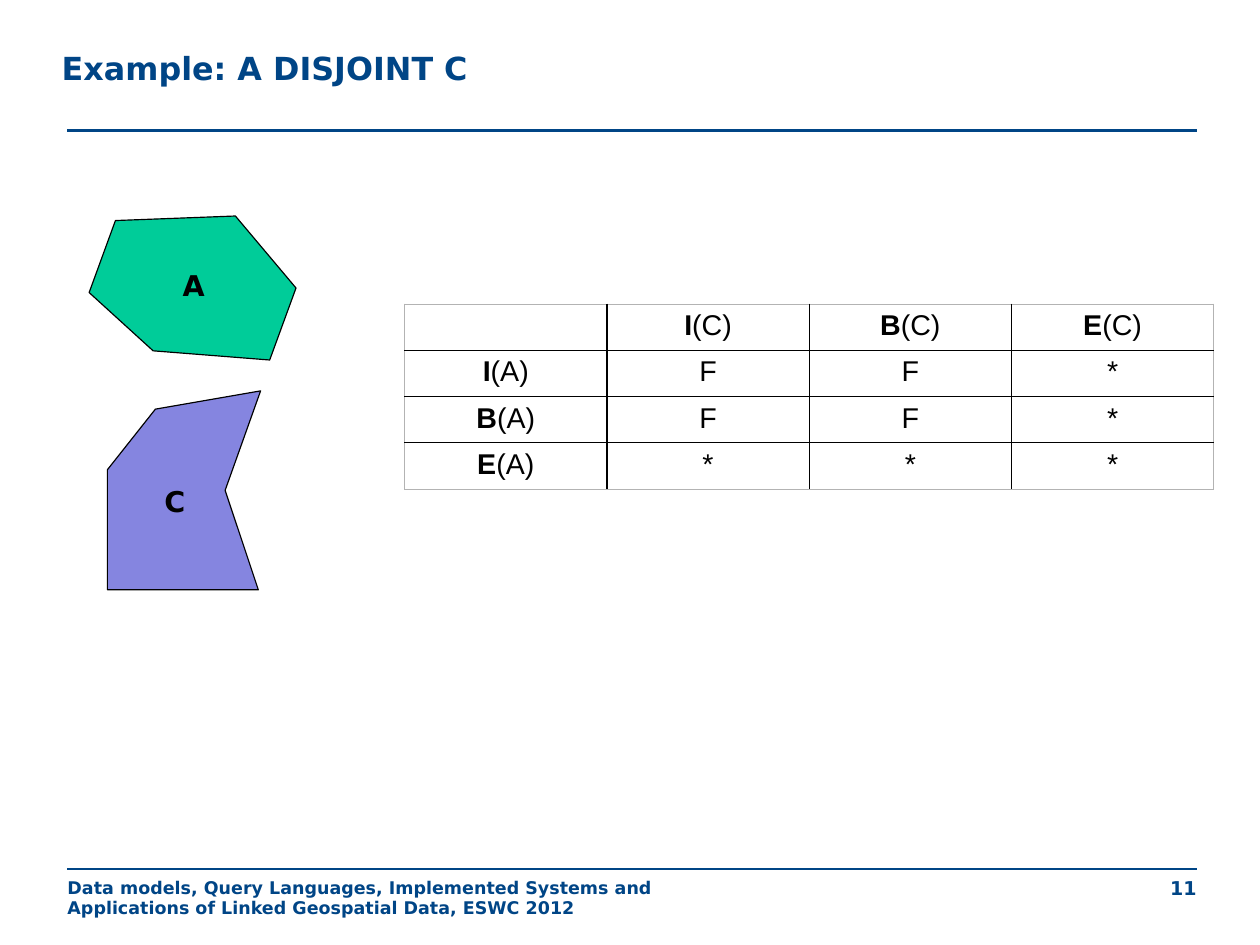
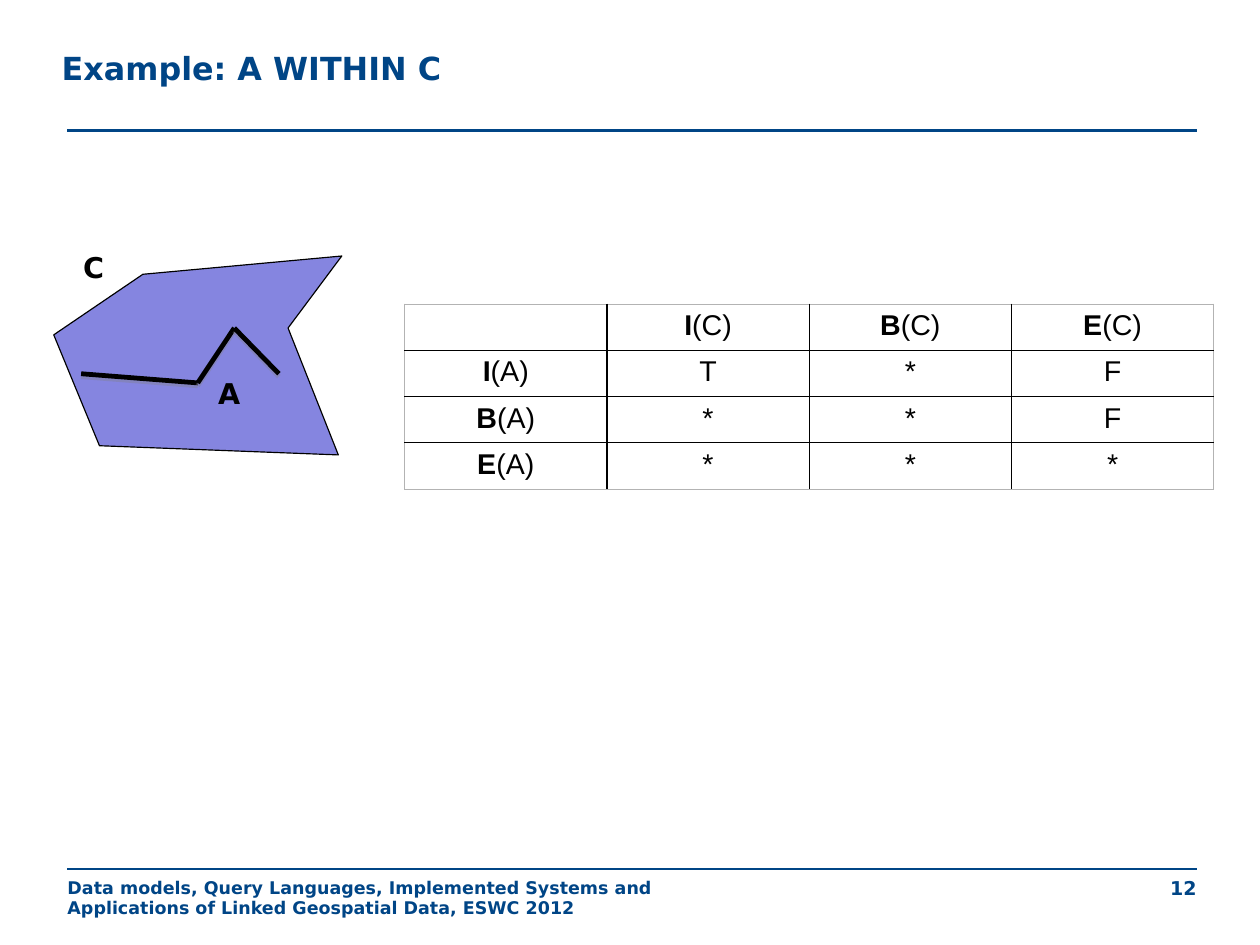
from itertools import pairwise

from pptx import Presentation
from pptx.dml.color import RGBColor
from pptx.enum import shapes, text
from pptx.oxml import parse_xml
from pptx.oxml.ns import nsdecls
from pptx.util import Inches, Pt

# Shared style
NAVY, BLACK, GREEN, VIOLET, GREY = "004586", "000000", "00CC99", "8585E0", "B3B3B3"
HEAD_FONT, TABLE_FONT = "DejaVu Sans", "Arial"
LEFT, RIGHT = 0.59, 10.47
FOOTER = ("Data models, Query Languages, Implemented Systems and "
          "Applications of Linked Geospatial Data, ESWC 2012")
FIRST_NUMBER = 11
SHADOW = ('<a:outerShdw blurRad="0" dist="22860" dir="5400000"><a:srgbClr val="808080">'
          '<a:alpha val="35000"/></a:srgbClr></a:outerShdw>')


def color(value):
    return RGBColor.from_string(value)


def style_span(span, size, font=HEAD_FONT, fill=BLACK, bold=True):
    span.font.size = Pt(size)
    span.font.name = font
    span.font.bold = bold
    span.font.color.rgb = color(fill)


def write(box, words, size, fill, align=text.PP_ALIGN.LEFT, spacing=0.98):
    box.text_frame.text = words
    para = box.text_frame.paragraphs[0]
    para.alignment = align
    para.line_spacing = spacing
    style_span(para.runs[0], size, fill=fill)


def clear_margins(frame):
    frame.word_wrap = True
    frame.margin_left = frame.margin_right = frame.margin_top = frame.margin_bottom = 0


def add_line(page, start, end, width, fill, effect=""):
    line = page.shapes.add_connector(
        shapes.MSO_CONNECTOR.STRAIGHT, *map(Inches, (*start, *end)))
    line.line.width = Pt(width)
    line.line.color.rgb = color(fill)
    line._element.spPr.append(
        parse_xml(f"<a:effectLst {nsdecls('a')}>{effect}</a:effectLst>"))


def add_footer_text(page, left, width, words, size, align):
    box = page.shapes.add_textbox(*map(Inches, (left, 7.68, width, 0.42)))
    clear_margins(box.text_frame)
    write(box, words, size, NAVY, align)


def add_page(deck, title, number):
    page = deck.slides.add_slide(deck.slide_layouts.get_by_name("Title Only"))
    # Rules and footer
    add_line(page, (LEFT, 7.6), (RIGHT, 7.6), 1.45, NAVY)
    add_line(page, (LEFT, 1.14), (RIGHT, 1.14), 2.15, NAVY)
    add_footer_text(page, LEFT, 5.39, FOOTER, 11, text.PP_ALIGN.LEFT)
    add_footer_text(page, 7.9, RIGHT - 7.9, str(number), 12, text.PP_ALIGN.RIGHT)
    # Title
    box = page.shapes.title
    box.left, box.top, box.width, box.height = map(Inches, (0.54, 0.34, 9.3, 0.53))
    clear_margins(box.text_frame)
    box.text_frame.auto_size = text.MSO_AUTO_SIZE.NONE
    box.text_frame.vertical_anchor = text.MSO_ANCHOR.MIDDLE
    write(box, title, 20, NAVY)
    return page


def add_region(page, points, fill):
    start, *others = [(Inches(x), Inches(y)) for x, y in points]
    builder = page.shapes.build_freeform(*start)
    builder.add_line_segments(others, close=True)
    region = builder.convert_to_shape()
    region.shadow.inherit = False
    region.fill.solid()
    region.fill.fore_color.rgb = color(fill)
    region.line.color.rgb = color(BLACK)
    region.line.width = Pt(0.75)


def add_path(page, points):
    for start, end in pairwise(points):
        add_line(page, start, end, 3, BLACK, SHADOW)


def add_label(page, letter, left, top):
    box = page.shapes.add_textbox(*map(Inches, (left, top, 0.4, 0.38)))
    box.text_frame.word_wrap = False
    box.text_frame.auto_size = text.MSO_AUTO_SIZE.SHAPE_TO_FIT_TEXT
    write(box, letter, 18, BLACK, spacing=0.93)


def add_borders(cell, outer):
    for side in ("L", "R", "T", "B"):
        width, fill = (6350, GREY) if side in outer else (12700, BLACK)
        cell._tc.get_or_add_tcPr().append(parse_xml(
            f'<a:ln{side} {nsdecls("a")} w="{width}"><a:solidFill>'
            f'<a:srgbClr val="{fill}"/></a:solidFill></a:ln{side}>'))


def fill_cell(cell, words, bold_first):
    para = cell.text_frame.paragraphs[0]
    para.alignment = text.PP_ALIGN.CENTER
    parts = (words[:1], words[1:]) if bold_first else (words,)
    for index, part in enumerate(filter(None, parts)):
        span = para.add_run()
        span.text = part
        style_span(span, 18, TABLE_FONT, bold=bold_first and index == 0)


def add_matrix(page, values):
    """Intersection matrix: three strings of three symbols each."""
    rows = [["", *(f"{part}(C)" for part in "IBE")]]
    rows += [[f"{part}(A)", *line] for part, line in zip("IBE", values)]
    table = page.shapes.add_table(
        4, 4, *map(Inches, (3.54, 2.66, 7.08, 1.62))).table
    table.first_row = table.horz_banding = False
    for r, row in enumerate(rows):
        for c, words in enumerate(row):
            cell = table.cell(r, c)
            outer = {0: "L", 3: "R"}.get(c, "") + {0: "T", 3: "B"}.get(r, "")
            add_borders(cell, outer)
            cell.fill.background()
            fill_cell(cell, words, bold_first=r == 0 or c == 0)


def draw_disjoint(page):
    add_region(page, [(1.01, 1.93), (2.06, 1.89), (2.59, 2.52),
                      (2.36, 3.15), (1.34, 3.07), (0.78, 2.56)], GREEN)
    add_region(page, [(1.36, 3.58), (2.28, 3.42), (1.97, 4.29),
                      (2.26, 5.16), (0.94, 5.16), (0.94, 4.11)], VIOLET)
    add_label(page, "A", 1.5, 2.32)
    add_label(page, "C", 1.34, 4.21)


def draw_within(page):
    add_region(page, [(1.25, 2.4), (2.99, 2.24), (2.52, 2.87),
                      (2.96, 3.98), (0.87, 3.9), (0.47, 2.93)], VIOLET)
    add_path(page, [(0.71, 3.27), (1.73, 3.35), (2.05, 2.87), (2.44, 3.27)])
    add_label(page, "C", 0.63, 2.16)
    add_label(page, "A", 1.81, 3.27)


def main():
    deck = Presentation()
    # 28 by 21 cm, a 4:3 page
    deck.slide_width = Inches(28 / 2.54)
    deck.slide_height = Inches(21 / 2.54)
    examples = [
        ("Example: A DISJOINT C", draw_disjoint, ("FF*", "FF*", "***")),
        ("Example: A WITHIN C", draw_within, ("T*F", "**F", "***")),
    ]
    for number, (title, draw, values) in enumerate(examples, FIRST_NUMBER):
        page = add_page(deck, title, number)
        draw(page)
        add_matrix(page, values)
    deck.save("out.pptx")


if __name__ == "__main__":
    main()
